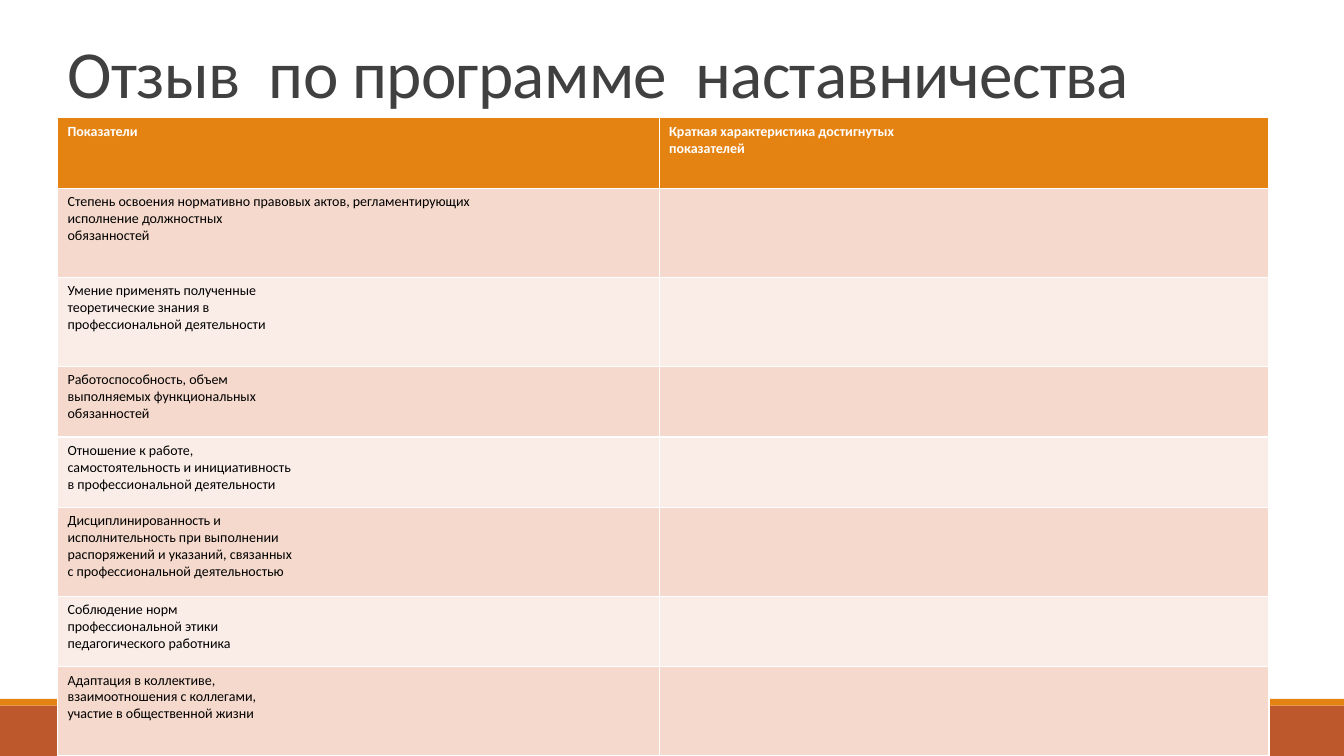
from dataclasses import dataclass

from pptx import Presentation
from pptx.dml.color import RGBColor
from pptx.enum.shapes import MSO_SHAPE
from pptx.enum.text import MSO_ANCHOR, MSO_AUTO_SIZE, PP_ALIGN
from pptx.util import Cm, Pt

RECTANGLE = MSO_SHAPE.RECTANGLE
BOTTOM = MSO_ANCHOR.BOTTOM
NO_AUTOFIT = MSO_AUTO_SIZE.NONE
LEFT = PP_ALIGN.LEFT
TITLE_ONLY_LAYOUT = 5

SLIDE_WIDTH, SLIDE_HEIGHT = 33.87, 19.05
CONTENT_LEFT, CONTENT_WIDTH = 1.45, 30.53
TITLE_TOP, TITLE_HEIGHT = 0.79, 2.16
TABLE_TOP = 2.97
COLUMN_WIDTHS = (15.16, 15.37)
LOW_ROW, HIGH_ROW = 1.77, 2.25
FOOTER_TOP, FOOTER_HEIGHT = 17.78, 1.27
STRIPE_HEIGHT = 0.17

TITLE = "Отзыв  по программе  наставничества"
HEADER = (
    "Показатели",
    "Краткая характеристика достигнутых\nпоказателей",
)
INDICATORS = (
    ("Степень освоения нормативно правовых актов, регламентирующих\n"
     "исполнение должностных\nобязанностей", HIGH_ROW),
    ("Умение применять полученные\nтеоретические знания в\n"
     "профессиональной деятельности", HIGH_ROW),
    ("Работоспособность, объем\nвыполняемых функциональных\n"
     "обязанностей", LOW_ROW),
    ("Отношение к работе,\nсамостоятельность и инициативность\n"
     "в профессиональной деятельности", LOW_ROW),
    ("Дисциплинированность и\nисполнительность при выполнении\n"
     "распоряжений и указаний, связанных\n"
     "с профессиональной деятельностью", HIGH_ROW),
    ("Соблюдение норм\nпрофессиональной этики\n"
     "педагогического работника", LOW_ROW),
    ("Адаптация в коллективе,\nвзаимоотношения с коллегами,\n"
     "участие в общественной жизни", HIGH_ROW),
)


@dataclass(frozen=True)
class Theme:
    font: str = "Calibri"
    title_size: int = 48
    table_size: int = 10
    title_color: str = "404040"
    header_text: str = "FFFFFF"
    body_text: str = "000000"
    accent: str = "E48312"
    footer: str = "BD582C"
    row_fills: tuple = ("F5D9CC", "FAEDE7")


class SlideBuilder:
    def __init__(self, slide, theme):
        self.slide = slide
        self.theme = theme

    def format_runs(self, paragraph, size, color, bold=False):
        for run in paragraph.runs:
            run.font.name = self.theme.font
            run.font.size = Pt(size)
            run.font.bold = bold
            run.font.color.rgb = RGBColor.from_string(color)

    def band(self, top, height, color):
        """Draw a plain strip across the whole slide."""
        shape = self.slide.shapes.add_shape(
            RECTANGLE, 0, Cm(top), Cm(SLIDE_WIDTH), Cm(height))
        shape.shadow.inherit = False
        shape.fill.solid()
        shape.fill.fore_color.rgb = RGBColor.from_string(color)
        shape.line.fill.background()

    def title(self, text):
        shape = self.slide.shapes.title
        shape.left, shape.top = Cm(CONTENT_LEFT), Cm(TITLE_TOP)
        shape.width, shape.height = Cm(CONTENT_WIDTH), Cm(TITLE_HEIGHT)
        frame = shape.text_frame
        frame.text = text
        frame.word_wrap = True
        frame.auto_size = NO_AUTOFIT
        frame.vertical_anchor = BOTTOM
        paragraph = frame.paragraphs[0]
        paragraph.alignment = LEFT
        paragraph.line_spacing = 0.85
        self.format_runs(paragraph, self.theme.title_size, self.theme.title_color)
        for run in paragraph.runs:
            run.font._element.set("spc", "-50")

    def cell(self, cell, text, fill, color, bold):
        cell.fill.solid()
        cell.fill.fore_color.rgb = RGBColor.from_string(fill)
        cell.text_frame.text = text
        for paragraph in cell.text_frame.paragraphs:
            self.format_runs(paragraph, self.theme.table_size, color, bold)

    def table(self, header, indicators):
        theme = self.theme
        heights = [LOW_ROW] + [height for _, height in indicators]
        table = self.slide.shapes.add_table(
            len(heights), len(header), Cm(CONTENT_LEFT), Cm(TABLE_TOP),
            Cm(CONTENT_WIDTH), Cm(sum(heights))).table
        for column, width in zip(table.columns, COLUMN_WIDTHS):
            column.width = Cm(width)
        for row, height in zip(table.rows, heights):
            row.height = Cm(height)
        for column, text in enumerate(header):
            self.cell(table.cell(0, column), text, theme.accent,
                      theme.header_text, True)
        for row, (indicator, _) in enumerate(indicators, start=1):
            fill = theme.row_fills[(row - 1) % len(theme.row_fills)]
            for column, text in enumerate((indicator, "")):
                self.cell(table.cell(row, column), text, fill,
                          theme.body_text, False)


def main():
    presentation = Presentation()
    presentation.slide_width = Cm(SLIDE_WIDTH)
    presentation.slide_height = Cm(SLIDE_HEIGHT)
    layout = presentation.slide_layouts[TITLE_ONLY_LAYOUT]
    theme = Theme()
    builder = SlideBuilder(presentation.slides.add_slide(layout), theme)
    builder.band(FOOTER_TOP, FOOTER_HEIGHT, theme.footer)
    builder.band(FOOTER_TOP - STRIPE_HEIGHT, STRIPE_HEIGHT, theme.accent)
    builder.title(TITLE)
    builder.table(HEADER, INDICATORS)
    presentation.save("out.pptx")


if __name__ == "__main__":
    main()
